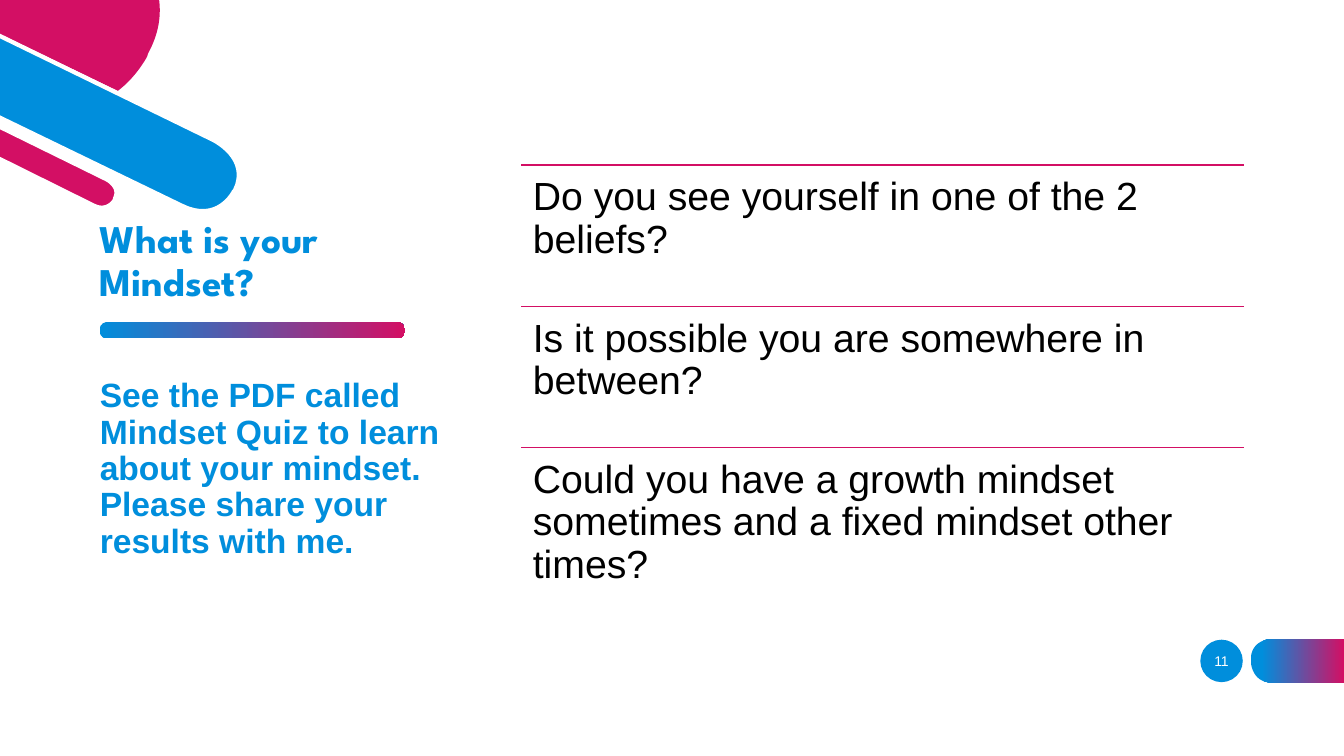
"""Build the "What is your Mindset?" slide with its three reflection questions."""
from pptx import Presentation, util as u
from pptx.dml.color import RGBColor
from pptx.enum import shapes, text
from pptx.oxml.ns import qn

Cm, Pt = u.Cm, u.Pt
BLUE, PINK, WHITE, BLACK = "008EDC", "D30F64", "FFFFFF", "000000"


def paint(fill, *colours, start=0):
    """Fill with one solid colour, or with a left-to-right gradient of two."""
    if len(colours) == 1:
        fill.solid()
        fill.fore_color.rgb = RGBColor.from_string(colours[0])
        return
    fill.gradient()
    fill.gradient_angle = 0
    for stop, colour, position in zip(fill.gradient_stops, colours, (start, 1)):
        stop.color.rgb = RGBColor.from_string(colour)
        stop.position = position


def write(sp, words, size, colour, bold=False, font="Arial", inset=None, **paragraph):
    """Put one formatted paragraph into a shape."""
    tf = sp.text_frame
    tf.word_wrap = True
    tf.auto_size = text.MSO_AUTO_SIZE.NONE
    if inset is not None:
        for side in ("left", "top", "right", "bottom"):
            setattr(tf, f"margin_{side}", Cm(inset))
    p = tf.paragraphs[0]
    for name, value in paragraph.items():
        setattr(p, name, value)
    r = p.add_run()
    r.text = words
    for name, value in {"size": Pt(size), "bold": bold, "name": font}.items():
        setattr(r.font, name, value)
    paint(r.font.fill, colour)


prs = Presentation()
prs.slide_width, prs.slide_height = Cm(33.87), Cm(19.05)
s = prs.slides.add_slide(prs.slide_layouts[1])

# Outlines in cm: pairs are corners, sextuples are Bezier curves.
outlines = [
    ([(0, 0), (4.01, 0), (4.06, .38, 4.01, .84, 3.73, 1.35), (3.71, 1.42),
      (3.71, 1.42, 3.45, 1.93, 2.97, 2.29), (0, .86)], [PINK], None),
    ([(-.2, .81), (5.38, 3.53), (5.38, 3.53, 6.32, 3.99, 5.92, 4.8), (5.89, 4.83),
      (5.89, 4.83, 5.49, 5.64, 4.57, 5.18), (-.2, 2.87)], [BLUE], WHITE),
    ([(-.2, 3.1), (2.69, 4.52), (2.69, 4.52, 3.05, 4.7, 2.9, 5), (2.9, 5.03),
      (2.9, 5.03, 2.72, 5.36, 2.36, 5.18), (-.2, 3.91)], [PINK], WHITE),
    ([(33.87, 17.2), (33.87, 16.1), (32.05, 16.1), (32.05, 16.1, 31.52, 16.1, 31.52, 16.64),
      (31.52, 16.64, 31.52, 17.2, 32.05, 17.2)], [BLUE, PINK], None),
]
for outline, colours, edge in outlines:
    points = []
    for step in outline:
        if len(step) == 2:
            points.append(step)
            continue
        begin = points[-1]
        for t in (i / 16 for i in range(1, 17)):
            points.append(tuple(
                (1 - t) ** 3 * begin[k] + 3 * (1 - t) ** 2 * t * step[k]
                + 3 * (1 - t) * t ** 2 * step[k + 2] + t ** 3 * step[k + 4] for k in (0, 1)))
    points = [(Cm(x), Cm(y)) for x, y in points]
    builder = s.shapes.build_freeform(*points[0])
    builder.add_line_segments(points[1:])
    sp = builder.convert_to_shape()
    sp.shadow.inherit = False
    paint(sp.fill, *colours, start=.12)
    if edge:
        paint(sp.line.fill, edge)
        sp.line.width = Pt(3)
    else:
        sp.line.fill.background()

rule = s.shapes.add_shape(shapes.MSO_SHAPE.ROUNDED_RECTANGLE, Cm(2.51), Cm(8.12), Cm(7.7), Cm(.41))
rule.adjustments[0] = .45
paint(rule.fill, BLUE, PINK)
badge = s.shapes.add_shape(shapes.MSO_SHAPE.OVAL, Cm(30.25), Cm(16.12), Cm(1.07), Cm(1.07))
paint(badge.fill, BLUE)
for sp in (rule, badge):
    sp.shadow.inherit = False
    sp.line.fill.background()
write(badge, "11", 10, WHITE, inset=0, alignment=text.PP_ALIGN.CENTER)

title, body = s.shapes.title, s.placeholders[1]
for sp, top, height in ((title, 4.37, 3.43), (body, 9.42, 5.13)):
    sp.left, sp.top, sp.width, sp.height = Cm(2.26), Cm(top), Cm(9.44), Cm(height)
title.text_frame.vertical_anchor = text.MSO_ANCHOR.BOTTOM
write(title, "What is your Mindset?", 28, BLUE, True, "League Spartan",
      alignment=text.PP_ALIGN.LEFT, line_spacing=.9)
write(body, "See the PDF called Mindset Quiz to learn about your mindset. "
      "Please share your results with me.", 24, BLUE, True, line_spacing=.9, space_before=Pt(10))
pPr = body.text_frame.paragraphs[0]._p.get_or_add_pPr()
pPr.set("marL", "0")
pPr.set("indent", "0")
pPr.append(pPr.makeelement(qn("a:buNone"), {}))

questions = [
    ("Do you see yourself in one of the 2 beliefs?", 18.24),
    ("Is it possible you are somewhere in between?", 18.24),
    ("Could you have a growth mindset sometimes and a fixed mindset other times?", 18.9),
]
left, first, pitch = 13.13, 4.16, 3.56
for i, (question, width) in enumerate(questions):
    top = Cm(first + i * pitch)
    line = s.shapes.add_connector(shapes.MSO_CONNECTOR.STRAIGHT, Cm(left), top, Cm(31.34), top)
    paint(line.line.fill, PINK)
    line.line.width = Pt(1)
    spPr = line._element.spPr
    spPr.append(spPr.makeelement(qn("a:effectLst"), {}))
    box = s.shapes.add_textbox(Cm(left), top, Cm(width), Cm(pitch))
    write(box, question, 28, BLACK, inset=.3, line_spacing=.9)

prs.save("out.pptx")
